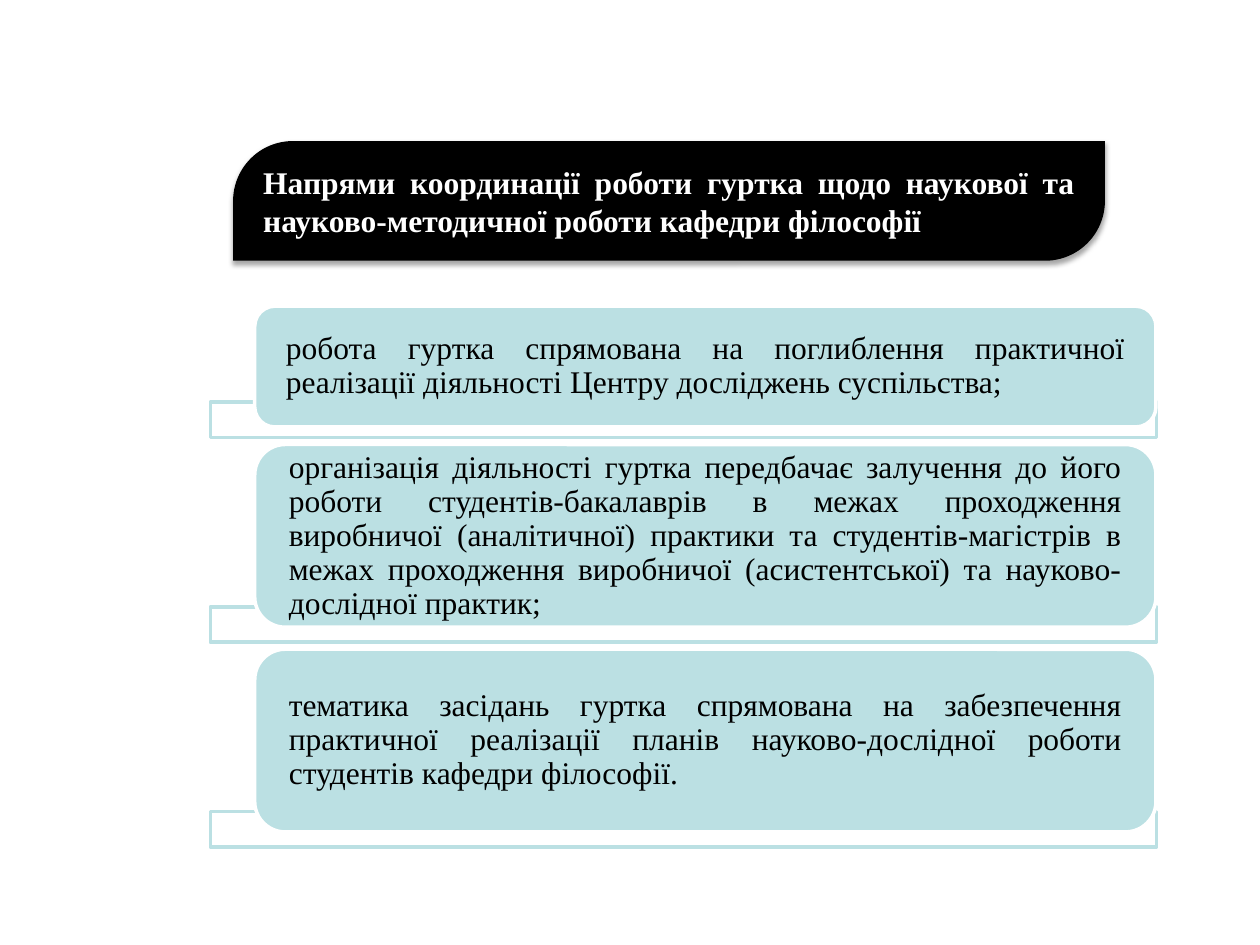
from lxml import etree
from pptx import Presentation
from pptx.dml.color import RGBColor
from pptx.enum.shapes import MSO_SHAPE as Shape
from pptx.enum.text import MSO_ANCHOR as Anchor, MSO_AUTO_SIZE as AutoSize, PP_ALIGN as Align
from pptx.oxml import parse_xml
from pptx.oxml.ns import nsdecls, qn
from pptx.util import Pt

# Content
HEADING = ("Напрями координації роботи гуртка щодо наукової та "
           "науково-методичної роботи кафедри філософії")
# Text, card height, row height (card plus the bar showing below it)
ROWS = [
    ("робота гуртка спрямована на поглиблення практичної реалізації "
     "діяльності Центру досліджень суспільства;", 69, 75),
    ("організація діяльності гуртка передбачає залучення до його роботи "
     "студентів-бакалаврів в межах проходження виробничої (аналітичної) практики "
     "та студентів-магістрів в межах проходження виробничої (асистентської) "
     "та науково-дослідної практик;", 104.4, 113),
    ("тематика засідань гуртка спрямована на забезпечення практичної реалізації "
     "планів науково-дослідної роботи студентів кафедри філософії.", 104.4, 113),
]

# Layout and style
FONT, SIZE = "Times New Roman", 18
BLACK, WHITE, AQUA = "000000", "FFFFFF", "BBE0E3"
HEADING_BOX = (133.2, 80.6, 498.2, 68.4)
BAR_LEFT, BAR_WIDTH, BAR_HEIGHT = 120.2, 540.7, 20.2
CARD_LEFT, CARD_WIDTH = 145.6, 515
ROWS_TOP, ROW_GAP = 175, 4


def color(value):
    return RGBColor.from_string(value)


def place(item, left, top, width, height):
    item.left, item.top = Pt(left), Pt(top)
    item.width, item.height = Pt(width), Pt(height)


def add_box(kind, area, fill, line=None):
    box = slide.shapes.add_shape(kind, *map(Pt, area))
    box.shadow.inherit = False
    box.fill.solid()
    box.fill.fore_color.rgb = color(fill)
    if line:
        box.line.color.rgb = color(line)
        box.line.width = Pt(2)
    else:
        box.line.fill.background()
    return box


def write(item, text, ink, margin, spacing, bold=False):
    frame = item.text_frame
    frame.word_wrap = True
    frame.auto_size = AutoSize.NONE
    frame.vertical_anchor = Anchor.MIDDLE
    frame.margin_left = frame.margin_right = Pt(margin)
    frame.margin_top = frame.margin_bottom = 0
    para = frame.paragraphs[0]
    para.text = text
    para.alignment = Align.JUSTIFY
    para.line_spacing = spacing
    para.space_before = Pt(0)
    para.font.name, para.font.size, para.font.bold = FONT, Pt(SIZE), bold
    para.font.color.rgb = color(ink)


deck = Presentation()
deck.slide_width, deck.slide_height = Pt(720), Pt(540)
slide = deck.slides.add_slide(deck.slide_layouts[5])

# Heading: black plate with a soft shadow, title on top
plate = add_box(Shape.ROUND_2_DIAG_RECTANGLE, HEADING_BOX, BLACK)
plate.adjustments[0], plate.adjustments[1] = 0.5, 0
effects = plate._element.spPr.find(qn("a:effectLst"))
effects.append(parse_xml(
    f'<a:outerShdw {nsdecls("a")} blurRad="{Pt(3.1)}" dist="{Pt(1.8)}" '
    'dir="5400000" rotWithShape="0"><a:srgbClr val="000000">'
    '<a:alpha val="35000"/></a:srgbClr></a:outerShdw>'))
title = slide.shapes.title
place(title, *HEADING_BOX)
write(title, HEADING, WHITE, margin=17.2, spacing=1, bold=True)
plate._element.addnext(title._element)

# Rows: each card overlaps a translucent bar at the foot of its row
top = ROWS_TOP
for text, card_height, row_height in ROWS:
    bar_top = top + row_height - BAR_HEIGHT
    bar = add_box(Shape.RECTANGLE, (BAR_LEFT, bar_top, BAR_WIDTH, BAR_HEIGHT), WHITE, AQUA)
    fill_color = bar._element.spPr.find(qn("a:solidFill"))[0]
    etree.SubElement(fill_color, qn("a:alpha"), val="90000")
    card = add_box(Shape.ROUNDED_RECTANGLE, (CARD_LEFT, top, CARD_WIDTH, card_height), AQUA, WHITE)
    write(card, text, BLACK, margin=14.4, spacing=0.9)
    top += row_height + ROW_GAP

deck.save("out.pptx")
